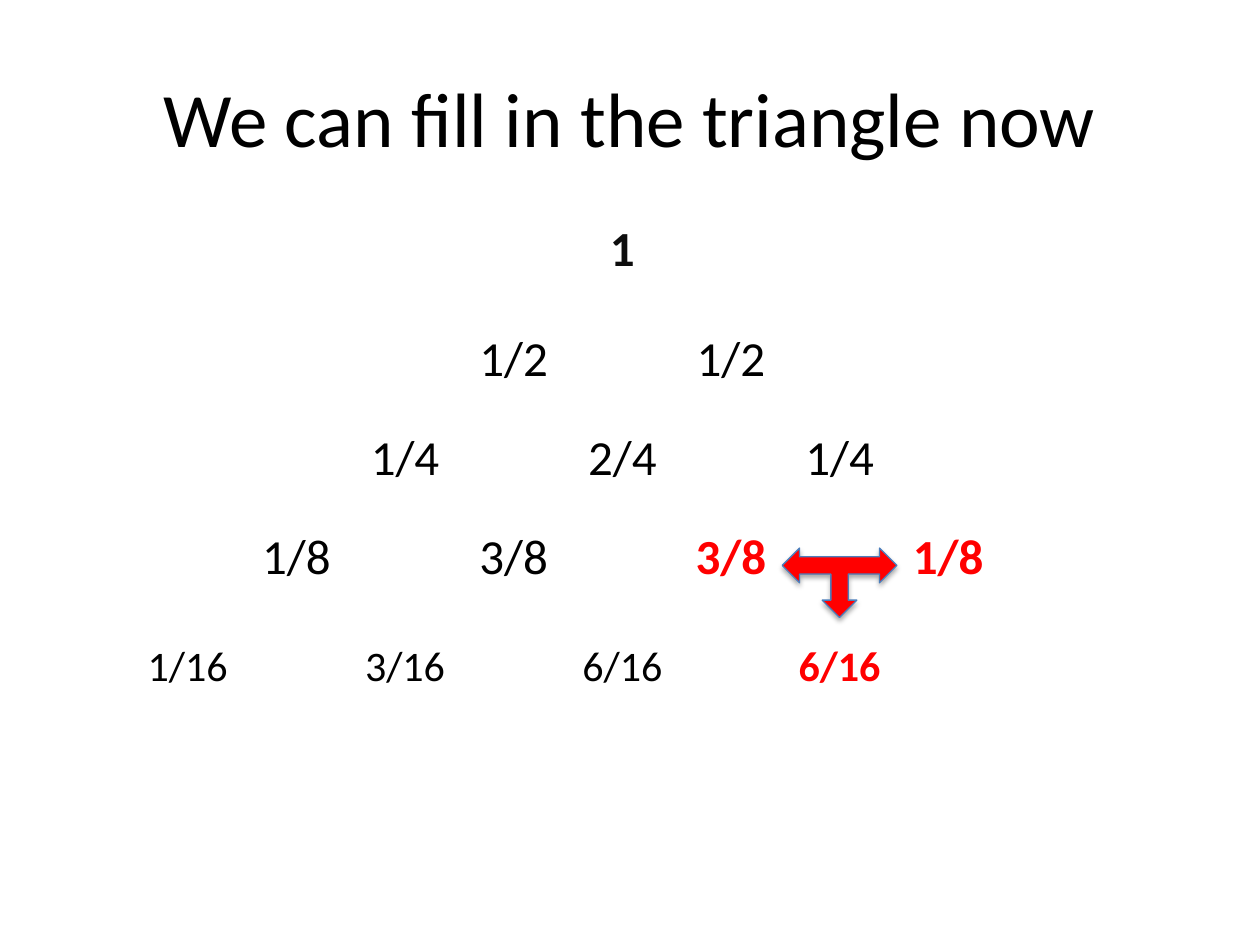
from dataclasses import dataclass

from lxml import etree
from pptx import Presentation
from pptx import util as u
from pptx.dml.color import RGBColor
from pptx.enum import shapes, text
from pptx.oxml import ns, parse_xml


@dataclass(frozen=True)
class Theme:
    font: str = "Calibri"
    paper: str = "FFFFFF"
    ink: str = "000000"
    apex: str = "0D0D0D"
    accent: str = "FF0000"
    outline: str = "4B7EBC"
    title_size: int = 44
    cell_size: int = 28
    small_size: int = 24


class SlideBuilder:
    def __init__(self, page, theme):
        self.page = page
        self.theme = theme

    def add_words(self, frame, words, size, color, bold=False):
        """Put one centred run into a text frame."""
        para = frame.paragraphs[0]
        para.alignment = text.PP_ALIGN.CENTER
        span = para.add_run()
        span.text = words
        span.font.name = self.theme.font
        span.font.size = u.Pt(size)
        span.font.bold = bold
        span.font.color.rgb = RGBColor.from_string(color)

    def title(self, words, left, top, width, height):
        box = self.page.shapes.add_textbox(left, top, width, height)
        box.text_frame.word_wrap = True
        box.text_frame.vertical_anchor = text.MSO_ANCHOR.MIDDLE
        self.add_words(box.text_frame, words, self.theme.title_size, self.theme.ink)

    def border(self, cell, bottom):
        """Rule all four sides of a cell; lines precede the fill in the XML."""
        properties = cell._tc.get_or_add_tcPr()
        widths = {"lnL": 1, "lnR": 1, "lnT": 1, "lnB": bottom}
        for place, (side, width) in enumerate(widths.items()):
            line = etree.Element(ns.qn(f"a:{side}"), w=str(u.Pt(width)))
            fill = etree.SubElement(line, ns.qn("a:solidFill"))
            etree.SubElement(fill, ns.qn("a:srgbClr"), val=self.theme.paper)
            properties.insert(place, line)

    def triangle(self, rows, highlights, left, top, column_width, heights):
        """Spread each row's entries over every other column, about the middle."""
        count = 2 * len(rows) - 1
        table = self.page.shapes.add_table(
            len(rows), count, left, top, column_width * count, sum(heights)).table
        for column in table.columns:
            column.width = column_width
        for row, height in zip(table.rows, heights):
            row.height = height

        for r, entries in enumerate(rows):
            for c in range(count):
                cell = table.cell(r, c)
                cell.fill.solid()
                cell.fill.fore_color.rgb = RGBColor.from_string(self.theme.paper)
                cell.vertical_anchor = text.MSO_ANCHOR.MIDDLE
                cell.margin_left = cell.margin_right = u.Cm(0.1)
                self.border(cell, bottom=3 if r == 0 else 1)
            size = self.theme.small_size if r == len(rows) - 1 else self.theme.cell_size
            for i, words in enumerate(entries):
                marked = (r, i) in highlights
                color = (self.theme.accent if marked
                         else self.theme.apex if r == 0 else self.theme.ink)
                cell = table.cell(r, len(rows) - 1 - r + 2 * i)
                self.add_words(cell.text_frame, words, size, color,
                               bold=marked or r == 0)

    def sum_arrow(self, left, top, width, height):
        """Three-way arrow turned to point left, right and down."""
        arrow = self.page.shapes.add_shape(
            shapes.MSO_SHAPE.LEFT_RIGHT_UP_ARROW, left, top, width, height)
        for i in range(3):
            arrow.adjustments[i] = 0.25
        arrow.fill.solid()
        arrow.fill.fore_color.rgb = RGBColor.from_string(self.theme.accent)
        arrow.line.color.rgb = RGBColor.from_string(self.theme.outline)
        arrow.line.width = u.Pt(0.75)
        properties = arrow._element.spPr
        properties.find(ns.qn("a:xfrm")).set("flipV", "1")
        properties.append(parse_xml(
            f'<a:effectLst {ns.nsdecls("a")}>'
            f'<a:outerShdw blurRad="{u.Pt(3.1)}" dist="{u.Pt(1.8)}" dir="5400000" '
            f'rotWithShape="0"><a:srgbClr val="{self.theme.ink}">'
            '<a:alpha val="35000"/></a:srgbClr></a:outerShdw></a:effectLst>'))


def main():
    deck = Presentation()
    deck.slide_width, deck.slide_height = u.Cm(25.4), u.Cm(19.05)
    page = deck.slides.add_slide(deck.slide_layouts[6])
    builder = SlideBuilder(page, Theme())

    # Heading
    builder.title("We can fill in the triangle now",
                  u.Cm(1.27), u.Cm(0.76), u.Cm(22.86), u.Cm(3.18))

    # Triangle of probabilities
    rows = [
        ["1"],
        ["1/2", "1/2"],
        ["1/4", "2/4", "1/4"],
        ["1/8", "3/8", "3/8", "1/8"],
        ["1/16", "3/16", "6/16", "6/16"],
    ]
    heights = [u.Cm(h) for h in (2.21, 2.21, 1.78, 2.21, 2.21)]
    builder.triangle(rows, {(3, 2), (3, 3), (4, 3)},
                     u.Cm(2.69), u.Cm(3.94), u.Cm(2.19), heights)

    # Two highlighted entries add up to the one below
    builder.sum_arrow(u.Cm(15.77), u.Cm(11.05), u.Cm(2.31), u.Cm(1.4))

    deck.save("out.pptx")


if __name__ == "__main__":
    main()
